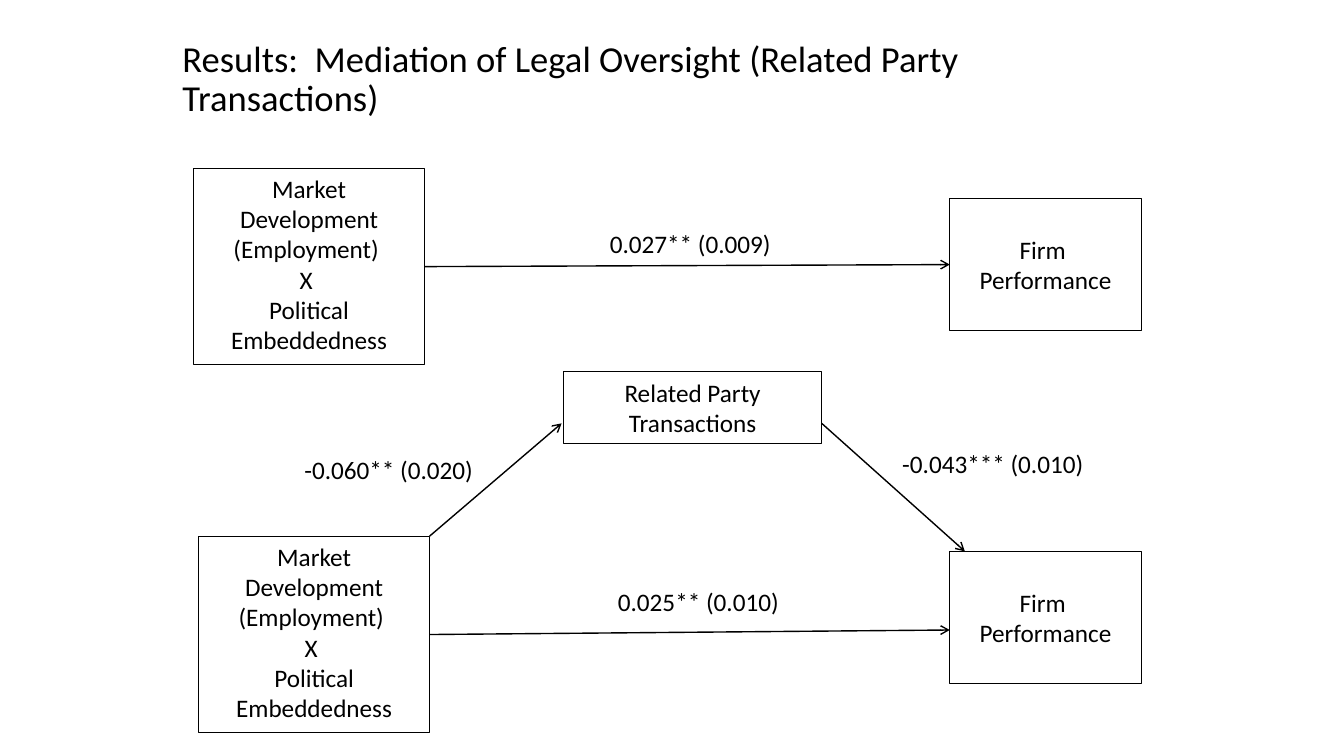
from lxml import etree
from pptx import Presentation
from pptx.dml.color import RGBColor
from pptx.enum.shapes import MSO_CONNECTOR, MSO_SHAPE
from pptx.enum.text import MSO_ANCHOR, MSO_AUTO_SIZE, PP_ALIGN
from pptx.oxml.ns import qn
from pptx.util import Inches, Pt

STRAIGHT, RECTANGLE = MSO_CONNECTOR.STRAIGHT, MSO_SHAPE.RECTANGLE
TOP, MIDDLE = MSO_ANCHOR.TOP, MSO_ANCHOR.MIDDLE
LEFT, CENTER = PP_ALIGN.LEFT, PP_ALIGN.CENTER
NO_FIT = MSO_AUTO_SIZE.NONE
LEFT_SIDE, RIGHT_SIDE = 1, 3
TITLE_ONLY = 5
BLACK = RGBColor(0, 0, 0)
FONT = "Calibri"
BODY_SIZE = 18
TITLE_SIZE = 26.1

# Content, placed on a grid of columns and rows
COLUMNS, ROWS = 133.3, 75
CELL = Inches(0.1)

TITLE = "Results:  Mediation of Legal Oversight (Related Party Transactions)"
TITLE_AREA = (17.1, 4.4, 97.8, 7.1)

CAUSE = ["Market Development (Employment) ", "X ", "Political Embeddedness"]
OUTCOME = ["Firm ", "Performance"]
MEDIATOR = ["Related Party Transactions"]
CAUSE_SIZE, OUTCOME_SIZE, MEDIATOR_SIZE = (22.9, 19.5), (19, 13.1), (25.6, 7.1)

# name: (lines, (column, row), size, anchor)
BOXES = {
    "direct cause": (CAUSE, (19.2, 16.7), CAUSE_SIZE, TOP),
    "direct outcome": (OUTCOME, (94.2, 19.7), OUTCOME_SIZE, MIDDLE),
    "mediated cause": (CAUSE, (19.7, 53.2), CAUSE_SIZE, TOP),
    "mediated outcome": (OUTCOME, (94.2, 54.7), OUTCOME_SIZE, MIDDLE),
    "mediator": (MEDIATOR, (55.9, 36.9), MEDIATOR_SIZE, TOP),
}

# (start, end): a box name joins its side, a pair is a grid point
ARROWS = [
    ("direct cause", "direct outcome"),
    ("mediated cause", (94.2, 62.5)),
    ((42.6, 53.2), (55.7, 42)),
    ((81.5, 42), (95.7, 54.7)),
]

# (text, (column, row), width)
COEFFICIENTS = [
    ("0.027** (0.009)", (59.5, 22.2), 19.3),
    ("-0.060** (0.020)", (29.2, 44.6), 20),
    ("-0.043*** (0.010)", (88.5, 44), 21.3),
    ("0.025** (0.010)", (60.3, 57.7), 19.3),
]
COEFFICIENT_HEIGHT = 4


def cells(*counts):
    return [round(count * CELL) for count in counts]


def write(shape, lines, size, alignment, **frame_format):
    frame = shape.text_frame
    for name, value in frame_format.items():
        setattr(frame, name, value)
    for index, line in enumerate(lines):
        paragraph = frame.add_paragraph() if index else frame.paragraphs[0]
        paragraph.alignment = alignment
        run = paragraph.add_run()
        run.text = line
        font_format = {"name": FONT, "size": Pt(size)}
        for name, value in font_format.items():
            setattr(run.font, name, value)
        run.font.color.rgb = BLACK


def add_box(slide, lines, position, size, anchor):
    box = slide.shapes.add_shape(RECTANGLE, *cells(*position, *size))
    box.shadow.inherit = False
    box.fill.background()
    box.line.color.rgb = BLACK
    box.line.width = Pt(0.75)
    write(box, lines, BODY_SIZE, CENTER, word_wrap=True, vertical_anchor=anchor)
    return box


def add_arrow(slide, boxes, start, end):
    start_point = (0, 0) if start in boxes else start
    end_point = (0, 0) if end in boxes else end
    arrow = slide.shapes.add_connector(STRAIGHT, *cells(*start_point, *end_point))
    if start in boxes:
        arrow.begin_connect(boxes[start], RIGHT_SIDE)
    if end in boxes:
        arrow.end_connect(boxes[end], LEFT_SIDE)
    arrow.line.color.rgb = BLACK
    arrow.line.width = Pt(1)
    outline = arrow.line._get_or_add_ln()
    etree.SubElement(outline, qn("a:tailEnd"), type="arrow")
    etree.SubElement(arrow._element.spPr, qn("a:effectLst"))


def main():
    presentation = Presentation()
    presentation.slide_width, presentation.slide_height = cells(COLUMNS, ROWS)
    slide = presentation.slides.add_slide(presentation.slide_layouts[TITLE_ONLY])

    title = slide.shapes.title
    title.left, title.top, title.width, title.height = cells(*TITLE_AREA)
    write(title, [TITLE], TITLE_SIZE, LEFT, word_wrap=True,
          vertical_anchor=MIDDLE, auto_size=NO_FIT)
    title.text_frame.paragraphs[0].line_spacing = 0.9

    boxes = {name: add_box(slide, *box) for name, box in BOXES.items()}
    for start, end in ARROWS:
        add_arrow(slide, boxes, start, end)
    for text, position, width in COEFFICIENTS:
        label = slide.shapes.add_textbox(
            *cells(*position, width, COEFFICIENT_HEIGHT))
        write(label, [text], BODY_SIZE, LEFT, word_wrap=False)

    presentation.save("out.pptx")


if __name__ == "__main__":
    main()
